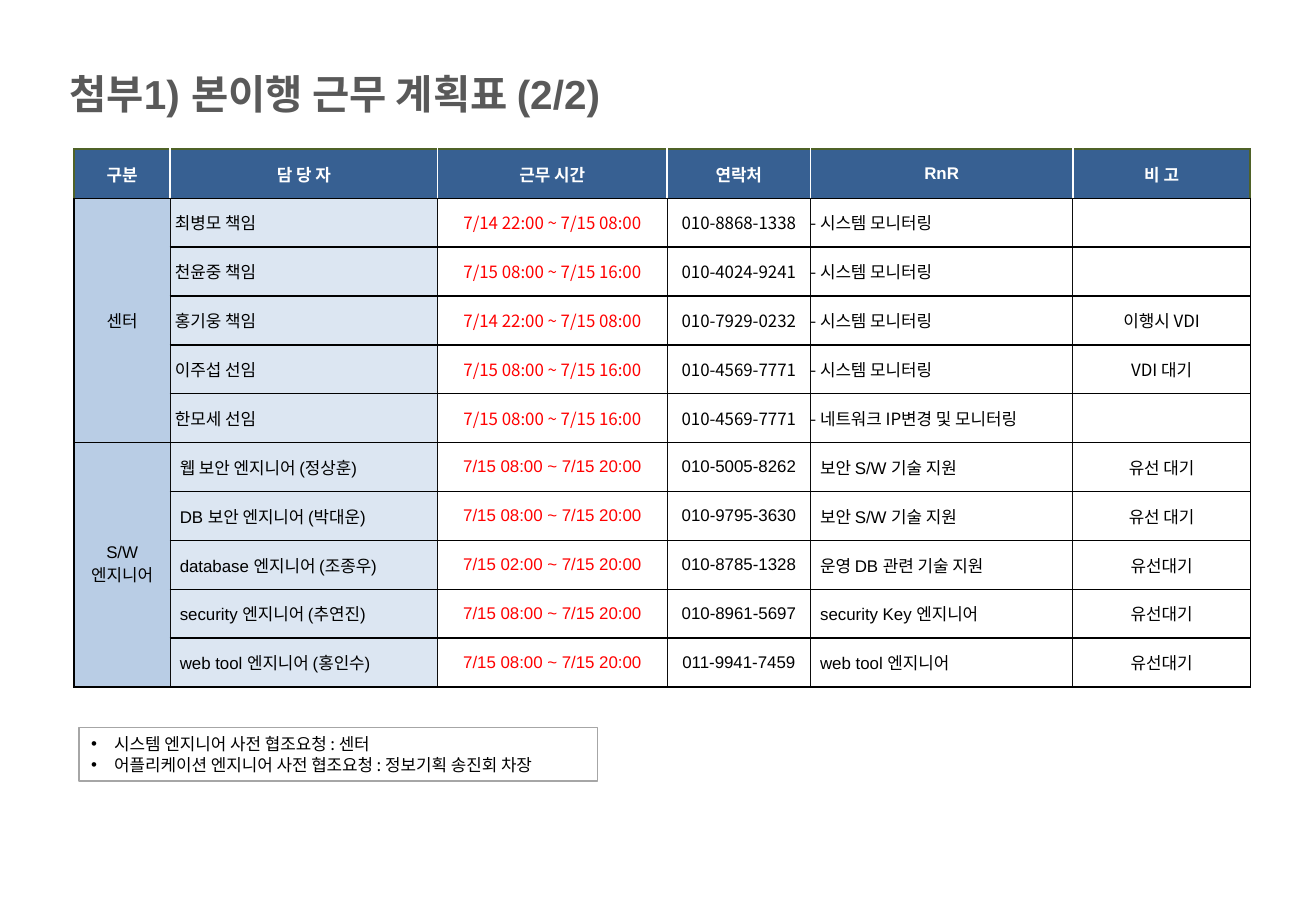
from lxml import etree
from pptx import Presentation
from pptx.dml.color import RGBColor
from pptx.enum.text import MSO_ANCHOR, MSO_AUTO_SIZE, PP_ALIGN
from pptx.oxml.ns import qn
from pptx.util import Inches, Pt

LEFT, CENTER = PP_ALIGN.LEFT, PP_ALIGN.CENTER
MIDDLE = MSO_ANCHOR.MIDDLE
NO_FIT = MSO_AUTO_SIZE.NONE
ARIAL, NOTO = "Arial", "Noto Sans CJK KR"

COLORS = {
    "title": "595959", "header": "376092", "group": "B9CDE5", "person": "DCE6F2",
    "white": "FFFFFF", "black": "000000", "hours": "FF0000",
    "frame": "4F6228", "inner": "0D0D0D", "note_line": "A6A6A6",
}

TITLE = "첨부1) 본이행 근무 계획표 (2/2)"
HEADERS = ["구분", "담 당 자", "근무 시간", "연락처", "RnR", "비 고"]
COLUMN_WIDTHS = [0.79, 2.2, 1.89, 1.18, 2.16, 1.46]
COLUMN_ALIGNS = [CENTER, LEFT, CENTER, CENTER, LEFT, CENTER]
NIGHT = "7/14 22:00 ~ 7/15 08:00"
DAY = "7/15 08:00 ~ 7/15 16:00"
LONG_DAY = "7/15 08:00 ~ 7/15 20:00"
EARLY_DAY = "7/15 02:00 ~ 7/15 20:00"
MONITORING = "- 시스템 모니터링"

# Each group: name, font, cell insets of the person and other columns, rows
GROUPS = [
    ("센터", NOTO, 0.04, 0, [
        ("최병모 책임", NIGHT, "010-8868-1338", MONITORING, ""),
        ("천윤중 책임", DAY, "010-4024-9241", MONITORING, ""),
        ("홍기웅 책임", NIGHT, "010-7929-0232", MONITORING, "이행시 VDI"),
        ("이주섭 선임", DAY, "010-4569-7771", MONITORING, "VDI 대기"),
        ("한모세 선임", DAY, "010-4569-7771", "- 네트워크 IP변경 및 모니터링", ""),
    ]),
    ("S/W 엔지니어", ARIAL, 0.08, 0.08, [
        ("웹 보안 엔지니어 (정상훈)", LONG_DAY, "010-5005-8262", "보안 S/W 기술 지원", "유선 대기"),
        ("DB 보안 엔지니어 (박대운)", LONG_DAY, "010-9795-3630", "보안 S/W 기술 지원", "유선 대기"),
        ("database 엔지니어 (조종우)", EARLY_DAY, "010-8785-1328", "운영 DB 관련 기술 지원", "유선대기"),
        ("security 엔지니어 (추연진)", LONG_DAY, "010-8961-5697", "security Key 엔지니어", "유선대기"),
        ("web tool 엔지니어 (홍인수)", LONG_DAY, "011-9941-7459", "web tool 엔지니어", "유선대기"),
    ]),
]
NOTES = [
    "시스템 엔지니어 사전 협조요청 : 센터",
    "어플리케이션 엔지니어 사전 협조요청 : 정보기획 송진회 차장",
]


def rgb(color):
    return RGBColor.from_string(COLORS[color])


def set_all(target, values):
    for name, value in values.items():
        setattr(target, name, value)


def write(paragraph, text, font=ARIAL, size=10, color="black", bold=False, align=LEFT):
    set_all(paragraph, {"alignment": align, "space_before": Pt(0)})
    run = paragraph.add_run()
    run.text = text
    set_all(run.font, {"name": font, "size": Pt(size), "bold": bold})
    run.font.color.rgb = rgb(color)
    east_asian = etree.SubElement(run.font._element, qn("a:ea"))
    east_asian.set("typeface", NOTO)


def place(shape, left, top, width, height):
    set_all(shape, {"left": Inches(left), "top": Inches(top),
                    "width": Inches(width), "height": Inches(height)})
    set_all(shape.text_frame, {"auto_size": NO_FIT, "word_wrap": True,
                               "vertical_anchor": MIDDLE})


def set_borders(cell, borders):
    properties = cell._tc.get_or_add_tcPr()
    for position, (side, (color, width)) in enumerate(borders.items()):
        line = etree.Element(qn(f"a:ln{side}"), w=str(Pt(width)))
        fill = etree.SubElement(line, qn("a:solidFill"))
        etree.SubElement(fill, qn("a:srgbClr"), val=COLORS[color])
        properties.insert(position, line)


def cell_borders(row, column):
    last = len(HEADERS) - 1
    if row == 0:
        edge, inner, top = ("frame", 1.5), ("white", 1), ("frame", 1.5)
    else:
        edge, inner, top = ("black", 1), ("inner", 0.5), ("black", 1)
    return {"L": edge if column == 0 else inner,
            "R": edge if column == last else inner,
            "T": top, "B": ("black", 1)}


def fill_cell(cell, text, inset, fill=None, **style):
    margins = ("margin_left", "margin_right", "margin_top", "margin_bottom")
    set_all(cell, dict.fromkeys(margins, Inches(inset)))
    cell.vertical_anchor = MIDDLE
    if fill:
        cell.fill.solid()
        cell.fill.fore_color.rgb = rgb(fill)
    else:
        cell.fill.background()
    if text:
        write(cell.text_frame.paragraphs[0], text, **style)


def add_schedule(slide):
    row_count = 1 + sum(len(group[-1]) for group in GROUPS)
    schedule = slide.shapes.add_table(
        row_count, len(HEADERS), Inches(0.61), Inches(1.23),
        Inches(sum(COLUMN_WIDTHS)), Inches(4.43)).table
    set_all(schedule, {"first_row": False, "horz_banding": False})
    for column, width in zip(schedule.columns, COLUMN_WIDTHS):
        column.width = Inches(width)

    # Header row
    for column, header in enumerate(HEADERS):
        fill_cell(schedule.cell(0, column), header, 0.08, "header",
                  color="white", bold=True, align=CENTER)

    # Groups of staff
    row = 1
    for name, font, person_inset, inset, people in GROUPS:
        group_cell = schedule.cell(row, 0)
        group_cell.merge(schedule.cell(row + len(people) - 1, 0))
        fill_cell(group_cell, name, 0.08, "group", align=CENTER)
        for person in people:
            for column, text in enumerate(person, start=1):
                fill_cell(schedule.cell(row, column), text,
                          person_inset if column == 1 else inset,
                          "person" if column == 1 else None, font=font,
                          color="hours" if column == 2 else "black",
                          align=COLUMN_ALIGNS[column])
            row += 1

    for row in range(row_count):
        for column in range(len(HEADERS)):
            set_borders(schedule.cell(row, column), cell_borders(row, column))


def add_notes(box):
    place(box, 0.65, 5.99, 4.27, 0.44)
    box.line.color.rgb = rgb("note_line")
    box.line.width = Pt(0.75)
    for index, note in enumerate(NOTES):
        frame = box.text_frame
        paragraph = frame.add_paragraph() if index else frame.paragraphs[0]
        properties = paragraph._p.get_or_add_pPr()
        properties.set("marL", str(Inches(0.19)))
        properties.set("indent", str(-Inches(0.19)))
        etree.SubElement(properties, qn("a:buFont"), typeface=ARIAL)
        etree.SubElement(properties, qn("a:buChar"), char="•")
        paragraph.line_spacing = Pt(12)
        write(paragraph, note, font=NOTO)


def main():
    deck = Presentation()
    set_all(deck, {"slide_width": Inches(10.83), "slide_height": Inches(7.5)})
    slide = deck.slides.add_slide(deck.slide_layouts[1])

    # Title
    heading = slide.shapes.title
    place(heading, 0.47, 0.52, 7.6, 0.5)
    write(heading.text_frame.paragraphs[0], TITLE, size=24, color="title", bold=True)

    # Work schedule and requests
    add_schedule(slide)
    add_notes(slide.placeholders[1])
    deck.save("out.pptx")


if __name__ == "__main__":
    main()
